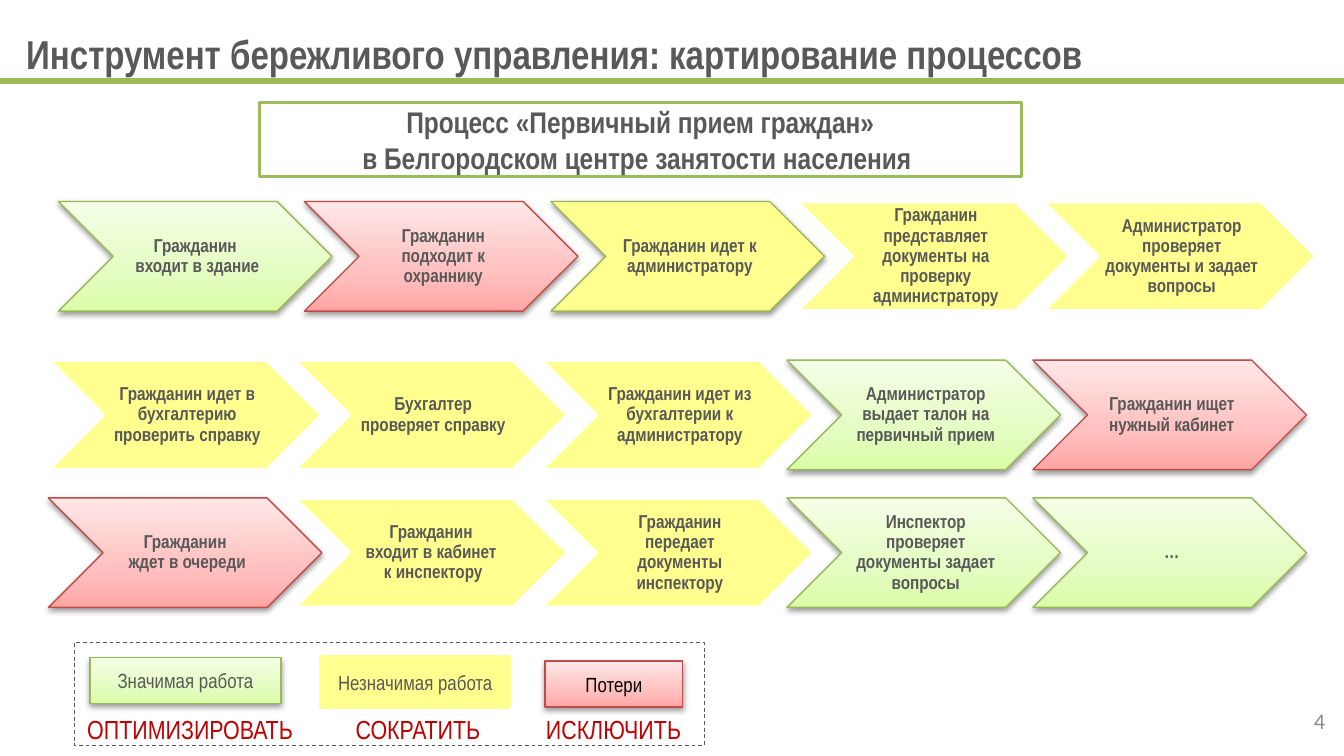
from pptx import Presentation
from pptx.dml.color import RGBColor
from pptx.enum.dml import MSO_LINE
from pptx.enum.shapes import MSO_CONNECTOR, MSO_SHAPE
from pptx.enum.text import MSO_ANCHOR, PP_ALIGN
from pptx.oxml import parse_xml
from pptx.oxml.ns import nsdecls, qn
from pptx.util import Pt

PX = 4572  # 200 px to the inch
RECT, CHEVRON = MSO_SHAPE.RECTANGLE, MSO_SHAPE.CHEVRON
LEFT, CENTER, RIGHT = PP_ALIGN.LEFT, PP_ALIGN.CENTER, PP_ALIGN.RIGHT
MIDDLE, TOP = MSO_ANCHOR.MIDDLE, MSO_ANCHOR.TOP
DASH = MSO_LINE.DASH

COLORS = {
    "text": "595959", "accent": "9BBB59", "number": "8C8C8C", "black": "000000",
    "action": "C00000", "yellow": "FFFF8F", "white": "FFFFFF",
    "green edge": "98B955", "red edge": "BF4C48",
}
GREEN = ("DAFDA7", "E4FCC2", "F5FFE7")
RED = ("FFA6A5", "FFC0BF", "FFE7E7")
STOPS = (0, 35000, 100000)

# Kind of work: fill, edge colour, edge width, shadow
KINDS = {
    "value": (GREEN, "green edge", 0.75, True),
    "loss": (RED, "red edge", 0.75, True),
    "first minor": ("yellow", "green edge", 0.75, True),
    "minor": ("yellow", "white", 2, False),
    "minor key": ("yellow", "yellow", 3.5, False),
}

# Left, top and steps of each row
ROWS = [
    (87, 300, [
        ("value", "Гражданин \vвходит в здание"),
        ("loss", "Гражданин подходит к охраннику"),
        ("first minor", "Гражданин идет к администратору"),
        ("minor", "Гражданин представляет документы на проверку администратору"),
        ("minor", "Администратор проверяет документы и задает вопросы"),
    ]),
    (72, 536, [
        ("minor", "Гражданин идет в бухгалтерию проверить справку"),
        ("minor", "Бухгалтер проверяет справку"),
        ("minor", "Гражданин идет из бухгалтерии к администратору"),
        ("value", "Администратор выдает талон на первичный прием"),
        ("loss", "Гражданин ищет нужный кабинет"),
    ]),
    (72, 741, [
        ("loss", "Гражданин \vждет в очереди"),
        ("minor", "Гражданин \vвходит в кабинет \vк инспектору"),
        ("minor", "Гражданин передает документы инспектору"),
        ("value", "Инспектор проверяет документы задает вопросы"),
        ("value", "…"),
    ]),
]

# Legend swatches and actions, placed from the corner of its frame
KEYS = [
    ("value", "Значимая работа", "text", (23, 23, 284, 68)),
    ("minor key", "Незначимая работа", "text", (369, 23, 276, 72)),
    ("loss", "Потери", "black", (700, 28, 205, 68)),
]
ACTIONS = [
    ("ОПТИМИЗИРОВАТЬ", LEFT, (-1, 95, 362, 67)),
    ("СОКРАТИТЬ", CENTER, (322, 95, 378, 67)),
    ("ИСКЛЮЧИТЬ", CENTER, (637, 95, 330, 67)),
]


def rgb(name):
    return RGBColor.from_string(COLORS[name])


def scale(box):
    return [v * PX for v in box]


def write(shape, text, size, color="text", align=CENTER, anchor=MIDDLE,
          bold=False, face="Arial Narrow", space=None):
    frame = shape.text_frame
    frame.text = text
    frame.word_wrap = True
    frame.vertical_anchor = anchor
    style = {"size": Pt(size), "bold": bold, "name": face}
    for par in frame.paragraphs:
        par.alignment = align
        par.line_spacing = space
        for key, val in style.items():
            setattr(par.font, key, val)
        par.font.color.rgb = rgb(color)


def label(slide, box, text, size, **style):
    write(slide.shapes.add_textbox(*scale(box)), text, size, **style)


def outline(slide, form, box, color, width):
    shape = slide.shapes.add_shape(form, *scale(box))
    shape.shadow.inherit = False
    shape.fill.background()
    shape.line.color.rgb = rgb(color)
    shape.line.width = Pt(width)
    return shape


def blend(shape, shades):
    shape.fill.gradient()
    shape.fill.gradient_angle = 90
    stops = shape._element.spPr.find(qn("a:gradFill")).find(qn("a:gsLst"))
    for old in list(stops):
        stops.remove(old)
    for pos, shade in zip(STOPS, shades):
        stops.append(parse_xml(
            f'<a:gs {nsdecls("a")} pos="{pos}"><a:srgbClr val="{shade}"/></a:gs>'))


def block(slide, form, box, kind):
    fill, edge, width, shade = KINDS[kind]
    shape = outline(slide, form, box, edge, width)
    if isinstance(fill, tuple):
        blend(shape, fill)
    else:
        shape.fill.solid()
        shape.fill.fore_color.rgb = rgb(fill)
    if shade:
        shape._element.spPr.find(qn("a:effectLst")).append(parse_xml(
            f'<a:outerShdw {nsdecls("a")} blurRad="40000" dist="20000" '
            'dir="5400000" rotWithShape="0"><a:srgbClr val="000000">'
            '<a:alpha val="38000"/></a:srgbClr></a:outerShdw>'))
    return shape


def header(slide, x, y, w, h):
    title = slide.shapes.title
    title.left, title.top, title.width, title.height = scale(
        (x + 19, y + 34, 1800, 92))
    write(title, "Инструмент бережливого управления: картирование процессов",
          21.6, align=LEFT, bold=True)
    rule = slide.shapes.add_connector(
        MSO_CONNECTOR.STRAIGHT, *scale((x, y + h, x + w, y + h)))
    rule.line.color.rgb = rgb("accent")
    rule.line.width = Pt(3)
    rule._element.spPr.append(parse_xml(f'<a:effectLst {nsdecls("a")}/>'))


def banner(slide, box):
    shape = outline(slide, RECT, box, "accent", 1.75)
    write(shape, "Процесс «Первичный прием граждан»\n"
          "в Белгородском центре занятости населения ", 16, bold=True)


def chain(slide, x, y, steps, w=407, h=163):
    # Each chevron overlaps the one before by a tenth
    for i, (kind, text) in enumerate(steps):
        step = block(slide, CHEVRON, (x + round(i * w * 0.9), y, w, h), kind)
        write(step, text, 10, bold=True, space=0.9)
        for side, gap in {"left": 9, "top": 3, "right": 3, "bottom": 3}.items():
            setattr(step.text_frame, "margin_" + side, gap * PX)


def legend(slide, x, y, w, h):
    for kind, text, color, (dx, dy, kw, kh) in KEYS:
        key = block(slide, RECT, (x + dx, y + dy, kw, kh), kind)
        write(key, text, 11, color=color)
    for text, align, (dx, dy, aw, ah) in ACTIONS:
        label(slide, (x + dx, y + dy, aw, ah), text, 14,
              color="action", align=align, anchor=TOP)
    outline(slide, RECT, (x, y, w, h), "text", 0.5).line.dash_style = DASH


def main():
    deck = Presentation()
    deck.slide_width, deck.slide_height = scale((2000, 1125))
    slide = deck.slides.add_slide(deck.slide_layouts[5])

    header(slide, 0, 0, 2000, 121)
    label(slide, (1526, 1043, 466, 60), "4", 12,
          color="number", align=RIGHT, face="Calibri")
    banner(slide, (386, 153, 1134, 110))
    for x, y, steps in ROWS:
        chain(slide, x, y, steps)
    legend(slide, 111, 956, 937, 154)

    deck.save("out.pptx")


if __name__ == "__main__":
    main()
